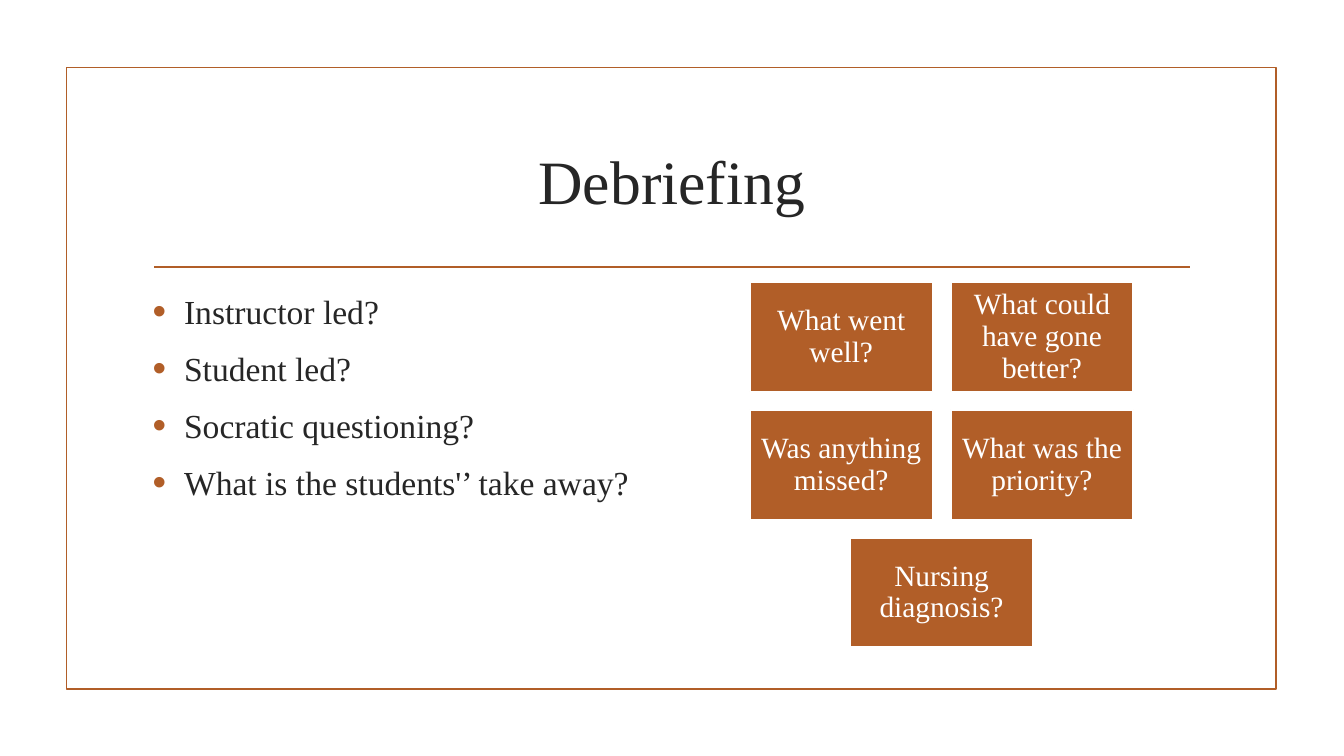
from lxml.etree import SubElement
from pptx import Presentation
from pptx.dml.color import RGBColor
from pptx.enum.shapes import MSO_CONNECTOR, MSO_SHAPE
from pptx.enum.text import MSO_ANCHOR, PP_ALIGN
from pptx.oxml.ns import qn
from pptx.util import Cm, Pt

RUST = RGBColor(0xB1, 0x5E, 0x28)
INK = RGBColor(0x26, 0x26, 0x26)
WHITE = RGBColor(0xFF, 0xFF, 0xFF)


def write(para, text, size, color):
    run = para.add_run()
    run.text = text
    run.font.name = "Times New Roman"
    run.font.size = Pt(size)
    run.font.color.rgb = color


def add_rect(left, top, width, height, edge):
    rect = slide.shapes.add_shape(
        MSO_SHAPE.RECTANGLE, Cm(left), Cm(top), Cm(width), Cm(height))
    rect.shadow.inherit = False
    rect.line.color.rgb = edge
    rect.line.width = Pt(1.25)
    return rect


deck = Presentation()
deck.slide_width = Cm(33.87)
deck.slide_height = Cm(19.05)
slide = deck.slides.add_slide(deck.slide_layouts[6])

frame = add_rect(1.68, 1.7, 30.48, 15.67, RUST)
frame.fill.background()

rule = slide.shapes.add_connector(
    MSO_CONNECTOR.STRAIGHT, Cm(3.89), Cm(6.73), Cm(30), Cm(6.73))
rule.line.color.rgb = RUST
rule.line.width = Pt(1.25)
SubElement(rule._element.spPr, qn("a:effectLst"))

title = slide.shapes.add_textbox(Cm(3.6), Cm(2.72), Cm(26.67), Cm(3.63)).text_frame
title.word_wrap = True
title.vertical_anchor = MSO_ANCHOR.MIDDLE
title.paragraphs[0].alignment = PP_ALIGN.CENTER
write(title.paragraphs[0], "Debriefing", 44, INK)

body = slide.shapes.add_textbox(Cm(3.6), Cm(7.11), Cm(13.1), Cm(9.2)).text_frame
body.word_wrap = True
body.margin_top = Cm(0.22)
points = [
    "Instructor led?",
    "Student led?",
    "Socratic questioning?",
    "What is the students'’ take away?",
]
for index, point in enumerate(points):
    para = body.add_paragraph() if index else body.paragraphs[0]
    props = para._p.get_or_add_pPr()
    props.set("marL", str(Cm(0.79)))
    props.set("indent", str(-Cm(0.79)))
    tint = SubElement(props, qn("a:buClr"))
    SubElement(tint, qn("a:srgbClr"), val=str(RUST))
    SubElement(props, qn("a:buSzPct"), val="115000")
    SubElement(props, qn("a:buFont"), typeface="Arial")
    SubElement(props, qn("a:buChar"), char="•")
    para.space_before = Pt(6 if index else 0)
    para.space_after = Pt(6)
    write(para, point, 24, INK)

rows = [
    ["What went well?", "What could have gone better?"],
    ["Was anything missed?", "What was the priority?"],
    ["Nursing diagnosis?"],
]
for row, labels in enumerate(rows):
    start = 18.9 + (2 - len(labels)) * 5.06 / 2
    for col, label in enumerate(labels):
        card = add_rect(start + col * 5.06, 7.11 + row * 3.22, 4.6, 2.76, WHITE)
        card.fill.solid()
        card.fill.fore_color.rgb = RUST
        text = card.text_frame
        text.word_wrap = True
        text.vertical_anchor = MSO_ANCHOR.MIDDLE
        text.margin_left = text.margin_right = Cm(0.22)
        text.margin_top = text.margin_bottom = Cm(0.22)
        para = text.paragraphs[0]
        para.alignment = PP_ALIGN.CENTER
        para.line_spacing = 0.9
        write(para, label, 21, WHITE)

deck.save("out.pptx")
